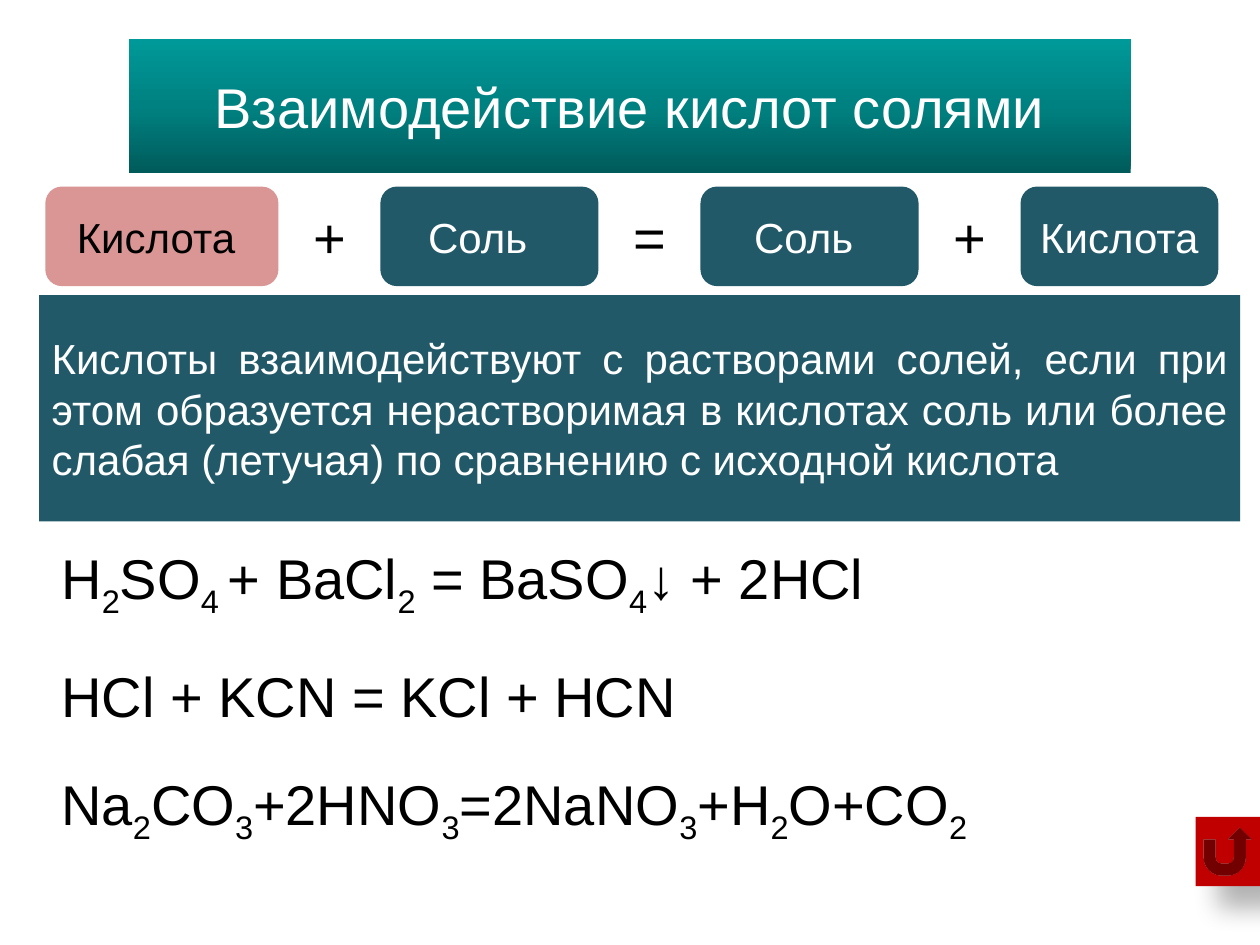
from dataclasses import dataclass
from typing import Optional

from lxml.etree import SubElement
from pptx import Presentation
from pptx.dml.color import RGBColor
from pptx.enum.shapes import MSO_SHAPE
from pptx.enum.text import MSO_ANCHOR, PP_ALIGN
from pptx.oxml.ns import qn
from pptx.util import Pt

COLORS = {
    "white": "FFFFFF",
    "black": "000000",
    "teal": "215968",
    "pink": "D99694",
    "red": "C00000",
}
TITLE_STOPS = {0: "005B5B", 50: "008181", 100: "009999"}

ROW_LEFT, ROW_TOP, ROW_HEIGHT, ROW_GAP = 25.9, 106.6, 56.9, 0.7
FORMULA_LEFT, FORMULA_TOP, FORMULA_WIDTH, FORMULA_STEP = 25.2, 303.8, 553, 64.8


@dataclass
class Term:
    text: str
    width: float
    size: float = 24
    fill: Optional[str] = "teal"
    color: str = "white"
    extra_right: float = 0


def sign(text: str) -> Term:
    return Term(text, ROW_HEIGHT, size=32, fill=None, color="black")


REACTION = [
    Term("Кислота ", 133.2, fill="pink", color="black"),
    sign("+"),
    Term("Соль ", 124.6, extra_right=6.7),
    sign("="),
    Term("Соль ", 124.6),
    sign("+"),
    Term("Кислота", 113),
]
# Subscripts stand between underscores.
FORMULAS = [
    "H_2_SO_4 _+ BaCl_2_ = BaSO_4_↓ + 2HCl",
    "HCl + KCN = KCl + HCN",
    "Na_2_CO_3_+2HNO_3_=2NaNO_3_+H_2_O+CO_2_",
]


def add_box(shapes, kind, left: float, top: float, width: float, height: float,
            fill: Optional[str] = None):
    box = shapes.add_shape(kind, Pt(left), Pt(top), Pt(width), Pt(height))
    box.shadow.inherit = False
    box.line.fill.background()
    if fill:
        box.fill.solid()
        box.fill.fore_color.rgb = RGBColor.from_string(COLORS[fill])
    else:
        box.fill.background()
    return box


def write(box, text: str, *, size: float, color: str, align=PP_ALIGN.CENTER,
          extra_right: float = 0) -> None:
    """Fill the box with text, lowering the parts between underscores."""
    frame = box.text_frame
    frame.word_wrap = True
    frame.vertical_anchor = MSO_ANCHOR.MIDDLE
    frame.margin_right = Pt(7.2 + extra_right)
    para = frame.paragraphs[0]
    para.alignment = align
    for index, part in enumerate(text.split("_")):
        if not part:
            continue
        span = para.add_run()
        span.text = part
        span.font.name = "Arial"
        span.font.size = Pt(size)
        span.font.color.rgb = RGBColor.from_string(COLORS[color])
        if index % 2:
            span.font._element.set("baseline", "-25000")


def set_gradient(box, stops: dict[int, str]) -> None:
    """Blend the stops from the bottom of the box to its top."""
    box.fill.gradient()
    gradient = box._element.spPr.find(qn("a:gradFill"))
    for child in list(gradient):
        gradient.remove(child)
    stop_list = SubElement(gradient, qn("a:gsLst"))
    for position, color in stops.items():
        stop = SubElement(stop_list, qn("a:gs"), pos=str(position * 1000))
        SubElement(stop, qn("a:srgbClr"), val=color)
    SubElement(gradient, qn("a:lin"), ang="16200000", scaled="0")


def set_shadow(box, *, blur: float, distance: float, angle: int, opacity: int) -> None:
    effects = box._element.spPr.find(qn("a:effectLst"))
    shadow = SubElement(effects, qn("a:outerShdw"), blurRad=str(Pt(blur)),
                        dist=str(Pt(distance)), dir=str(angle * 60000),
                        algn="tl", rotWithShape="0")
    color = SubElement(shadow, qn("a:srgbClr"), val=COLORS["black"])
    SubElement(color, qn("a:alpha"), val=str(opacity * 1000))


def add_reaction(page) -> None:
    group = page.shapes.add_group_shape()
    left = ROW_LEFT
    for term in REACTION:
        box = add_box(group.shapes, MSO_SHAPE.ROUNDED_RECTANGLE, left, ROW_TOP,
                      term.width, ROW_HEIGHT, term.fill)
        write(box, term.text, size=term.size, color=term.color,
              extra_right=term.extra_right)
        left += term.width + ROW_GAP


def main() -> None:
    deck = Presentation()
    deck.slide_width, deck.slide_height = Pt(720), Pt(540)
    page = deck.slides.add_slide(deck.slide_layouts[6])

    title = add_box(page.shapes, MSO_SHAPE.RECTANGLE, 73.6, 22.3, 572.6, 76.5)
    set_gradient(title, TITLE_STOPS)
    write(title, "Взаимодействие кислот солями", size=32, color="white")

    rule = add_box(page.shapes, MSO_SHAPE.RECTANGLE, 22.4, 168.6, 686.3, 129.4, "teal")
    write(rule, "Кислоты взаимодействуют с растворами солей, если при этом образуется "
                "нерастворимая в кислотах соль или более слабая (летучая) по сравнению "
                "с исходной кислота", size=24, color="white", align=PP_ALIGN.JUSTIFY)

    add_reaction(page)

    for index, formula in enumerate(FORMULAS):
        box = add_box(page.shapes, MSO_SHAPE.ROUNDED_RECTANGLE, FORMULA_LEFT,
                      FORMULA_TOP + index * FORMULA_STEP, FORMULA_WIDTH, ROW_HEIGHT)
        write(box, formula, size=32, color="black", align=PP_ALIGN.LEFT)

    button = add_box(page.shapes, MSO_SHAPE.ACTION_BUTTON_RETURN,
                     683.2, 466.8, 36.8, 39.6, "red")
    set_shadow(button, blur=15, distance=18, angle=45, opacity=30)

    deck.save("out.pptx")


if __name__ == "__main__":
    main()
